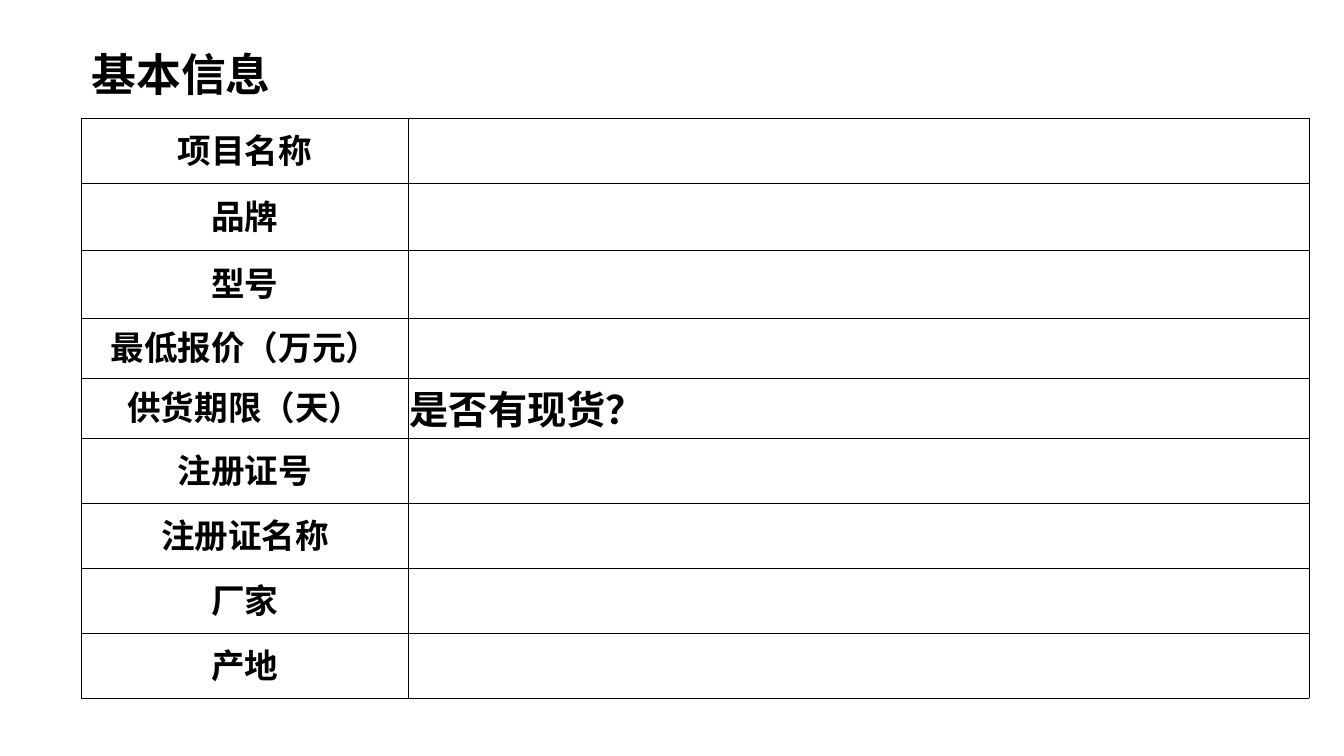
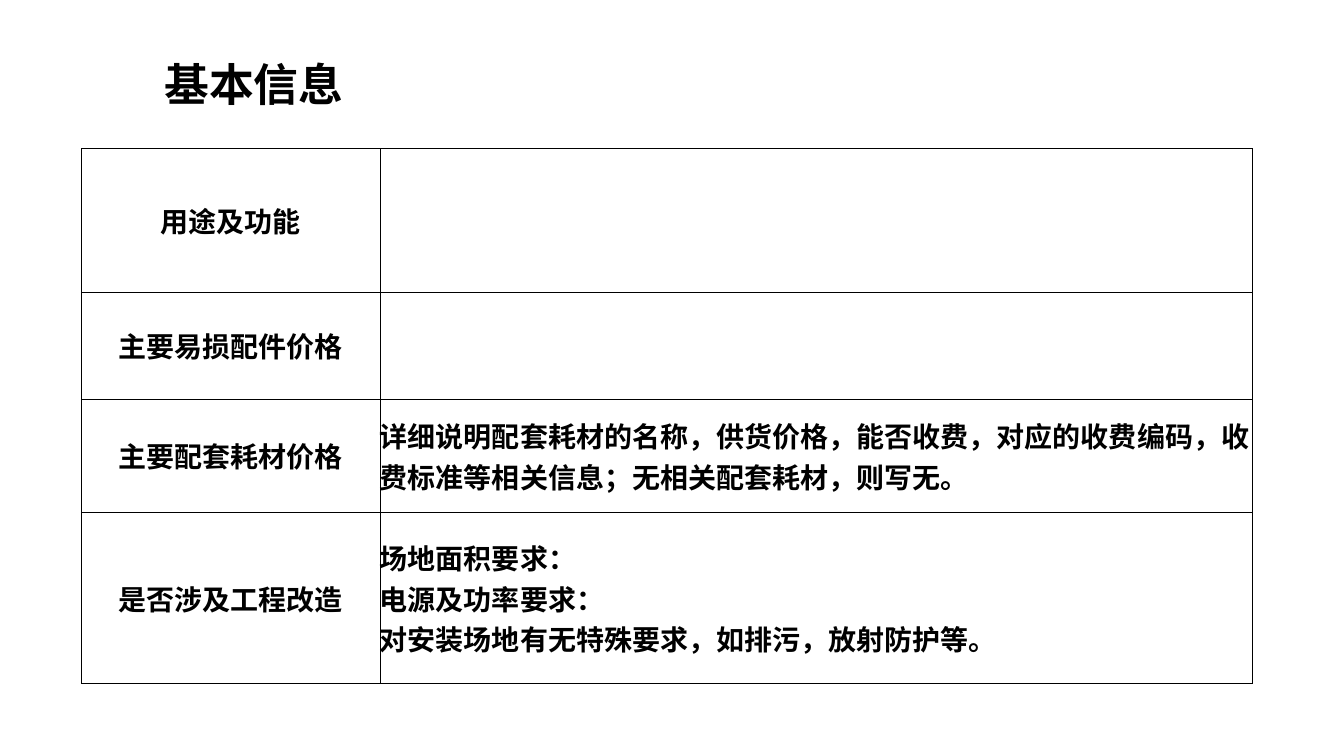
"""Build two slides of basic product information forms."""
from lxml.etree import SubElement
from pptx import Presentation
from pptx.dml.color import RGBColor
from pptx.enum.text import MSO_ANCHOR as Anchor, MSO_AUTO_SIZE as Auto, PP_ALIGN as Align
from pptx.oxml.ns import qn
from pptx.util import Pt

BLACK = RGBColor(0, 0, 0)
NOTO = "Noto Sans CJK SC"
TITLE = "基本信息"
SIDES = ("left", "top", "right", "bottom")

FORMS = [
    dict(
        title=(58.3, 30.2), at=(58, 84.8), cols=(234, 643),
        label=dict(size=24, name="Arial", pad=(0.7, 0.7, 0.7, 3.6), anchor=Anchor.MIDDLE),
        value=dict(size=28, name=NOTO, pad=(0.7, 0.7, 0.7, 0.7), anchor=Anchor.TOP),
        rows=[
            (46, "项目名称", []),
            (48, "品牌", []),
            (48.5, "型号", []),
            (43, "最低报价（万元）", []),
            (43, "供货期限（天）", ["是否有现货？"]),
            (46.4, "注册证号", []),
            (46.4, "注册证名称", []),
            (46.4, "厂家", []),
            (46.4, "产地", []),
        ],
    ),
    dict(
        title=(110.2, 36.7), at=(58.3, 106), cols=(213, 623.5),
        label=dict(size=20, name=NOTO, pad=(5, 0, 5, 0), anchor=Anchor.MIDDLE),
        value=dict(size=20, name=NOTO, pad=(0, 0, 0, 0), anchor=Anchor.MIDDLE),
        rows=[
            (102.5, "用途及功能", []),
            (76.5, "主要易损配件价格", []),
            (81, "主要配套耗材价格", [
                "详细说明配套耗材的名称，供货价格，能否收费，对应的收费编码，"
                "收费标准等相关信息；无相关配套耗材，则写无。"]),
            (122.5, "是否涉及工程改造", [
                "场地面积要求：",
                "电源及功率要求：",
                "对安装场地有无特殊要求，如排污，放射防护等。"]),
        ],
    ),
]


def write(frame, lines, size, name, align=Align.LEFT):
    for i, line in enumerate(lines):
        para = frame.paragraphs[0] if i == 0 else frame.add_paragraph()
        para.alignment = align
        run = para.add_run()
        run.text = line
        for key, val in dict(size=Pt(size), name=name, bold=True).items():
            setattr(run.font, key, val)
        run.font.color.rgb = BLACK
        props = run.font.language_id and run._r.get_or_add_rPr() or run._r.get_or_add_rPr()
        SubElement(props, qn("a:ea"), typeface=NOTO)


def border(cell):
    props = cell._tc.get_or_add_tcPr()
    for side in "LRTB":
        line = SubElement(props, qn(f"a:ln{side}"), w=str(Pt(0.5)))
        fill = SubElement(line, qn("a:solidFill"))
        SubElement(fill, qn("a:srgbClr"), val=str(BLACK))
    cell.fill.background()


def fill_cell(cell, lines, style, align):
    border(cell)
    for side, gap in zip(SIDES, style["pad"]):
        setattr(cell, f"margin_{side}", Pt(gap))
    cell.vertical_anchor = style["anchor"]
    write(cell.text_frame, lines, style["size"], style["name"], align)


def add_title(slide, left, top):
    frame = slide.shapes.add_textbox(Pt(left), Pt(top), Pt(312), Pt(45.4)).text_frame
    frame.word_wrap = True
    frame.auto_size = Auto.SHAPE_TO_FIT_TEXT
    write(frame, [TITLE], 32, NOTO)


def add_form(slide, form):
    rows, cols = form["rows"], form["cols"]
    box = (*form["at"], sum(cols), sum(row[0] for row in rows))
    table = slide.shapes.add_table(len(rows), len(cols), *map(Pt, box)).table
    table.first_row = table.horz_banding = False
    for col, width in zip(table.columns, cols):
        col.width = Pt(width)
    for i, (height, label, lines) in enumerate(rows):
        table.rows[i].height = Pt(height)
        fill_cell(table.cell(i, 0), [label], form["label"], Align.CENTER)
        fill_cell(table.cell(i, 1), lines, form["value"], Align.LEFT)


def main():
    deck = Presentation()
    deck.slide_width, deck.slide_height = Pt(960), Pt(540)
    for form in FORMS:
        slide = deck.slides.add_slide(deck.slide_layouts[6])
        add_title(slide, *form["title"])
        add_form(slide, form)
    deck.save("out.pptx")


if __name__ == "__main__":
    main()
